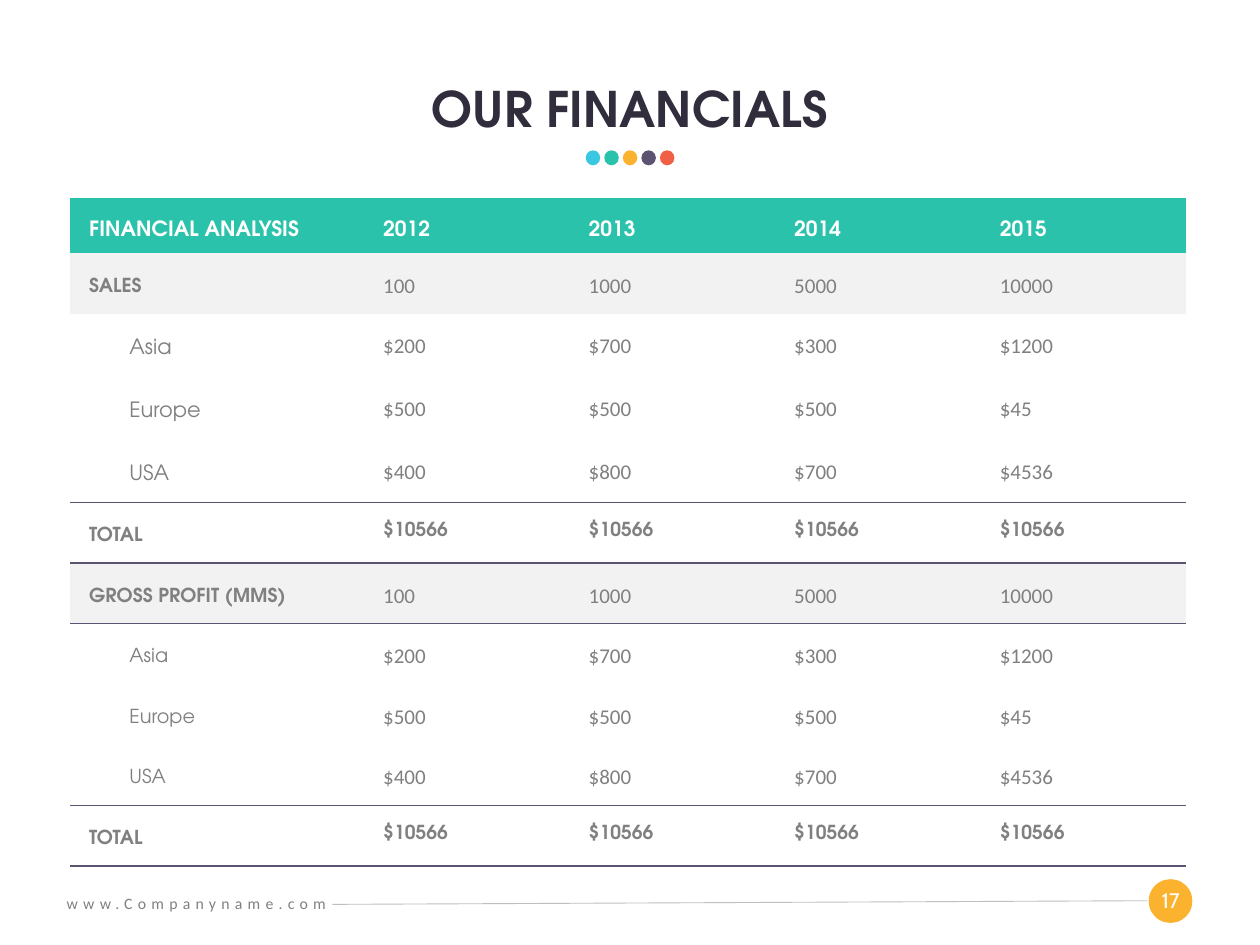
from lxml import etree
from pptx import Presentation
from pptx.dml.color import RGBColor
from pptx.enum import shapes, text
from pptx.oxml import ns
from pptx.util import Pt

HEADING_FONT, BODY_FONT, NUMBER_FONT = "TeX Gyre Adventor", "Calibri", "Cabin"
TEAL, YELLOW, PURPLE = "2BC2AC", "FBB22F", "5C5271"
DOT_COLORS = ["3AC7E2", TEAL, YELLOW, PURPLE, "F15F47"]
WHITE, GREY, PALE, DARK = "FFFFFF", "808080", "F2F2F2", "322D3D"

HEADER = ["FINANCIAL ANALYSIS", "2012", "2013", "2014", "2015"]
REGIONS = [
    ["Asia", "$200", "$700", "$300", "$1200"],
    ["Europe", "$500", "$500", "$500", "$45"],
    ["USA", "$400", "$800", "$700", "$4536"],
]
SUMMARY = ["100", "1000", "5000", "10000"]
TOTAL = ["TOTAL"] + ["$10566"] * 4
# Each section has a name and the size of its region labels
SECTIONS = [("SALES", 12), ("GROSS PROFIT (MMS)", 11)]


def color(value):
    return RGBColor.from_string(value)


def set_all(target, values):
    for name, value in values.items():
        setattr(target, name, value)


def write(paragraph, words, size, font, hex_color, bold=False):
    run = paragraph.add_run()
    run.text = words
    set_all(run.font, {"size": Pt(size), "name": font, "bold": bold})
    run.font.color.rgb = color(hex_color)
    return run


def add_filled(parent, kind, box, hex_color):
    shape = parent.add_shape(kind, *map(Pt, box))
    shape.shadow.inherit = False
    shape.fill.solid()
    shape.fill.fore_color.rgb = color(hex_color)
    shape.line.fill.background()
    return shape


def add_label(slide, box, words, size, font, hex_color, wrap=True, align=None):
    frame = slide.shapes.add_textbox(*map(Pt, box)).text_frame
    set_all(frame, {"word_wrap": wrap,
                    "auto_size": text.MSO_AUTO_SIZE.SHAPE_TO_FIT_TEXT})
    paragraph = frame.paragraphs[0]
    paragraph.alignment = align
    return write(paragraph, words, size, font, hex_color)


def add_title(slide, box, words):
    title = slide.shapes.title
    set_all(title, dict(zip(("left", "top", "width", "height"), map(Pt, box))))
    set_all(title.text_frame, {"vertical_anchor": text.MSO_ANCHOR.BOTTOM,
                               "auto_size": text.MSO_AUTO_SIZE.NONE,
                               "word_wrap": True})
    paragraph = title.text_frame.paragraphs[0]
    set_all(paragraph, {"alignment": text.PP_ALIGN.CENTER, "line_spacing": 0.9})
    write(paragraph, words, 28, HEADING_FONT, DARK, True)


def add_dots(slide, box):
    left, top, width, height = box
    diameter = 8.3
    pitch = (width - diameter) / (len(DOT_COLORS) - 1)
    group = slide.shapes.add_group_shape()
    for index, hex_color in enumerate(DOT_COLORS):
        add_filled(group.shapes, shapes.MSO_SHAPE.OVAL,
                   (left + index * pitch, top, diameter, height), hex_color)


def add_footer(slide, box):
    left, top, width, height = box
    right, badge = left + width, 25
    badge_left = right - badge
    circle = add_filled(slide.shapes, shapes.MSO_SHAPE.ROUNDED_RECTANGLE,
                        (badge_left, top, badge, height), YELLOW)
    circle.adjustments[0] = 0.5
    add_label(slide, (badge_left - 1, top + 1.4, badge + 2, 21.6), "17", 12,
              NUMBER_FONT, WHITE, False, text.PP_ALIGN.CENTER)

    # Rule between the address and the page number
    rule = slide.shapes.add_connector(
        shapes.MSO_CONNECTOR.STRAIGHT, Pt(left + 159), Pt(top + 14.4),
        Pt(badge_left - 1), Pt(top + 12.3))
    rule.line.color.rgb = color("BFBFBF")
    rule.line.width = Pt(0.5)
    etree.SubElement(rule.element.spPr, ns.qn("a:effectLst"))

    address = add_label(slide, (left, top + 5, 230, 18), "www.Companyname.com",
                        9, BODY_FONT, GREY)
    address.font.element.set("spc", "300") if hasattr(address.font, "element") \
        else address._r.get_or_add_rPr().set("spc", "300")


def add_border(cell, side):
    properties = cell._tc.get_or_add_tcPr()
    line = etree.Element(ns.qn("a:" + side), w=str(Pt(1)))
    fill = etree.SubElement(line, ns.qn("a:solidFill"))
    etree.SubElement(fill, ns.qn("a:srgbClr"), val=PURPLE)
    # Borders come before the fill, top before bottom
    position = len(properties.findall(ns.qn("a:lnT")))
    properties.insert(position, line)


def fill_cell(cell, words, fill, style, indent=10.8, bottom=8.6, label=False,
              borders=()):
    set_all(cell, {"margin_left": Pt(indent), "margin_right": Pt(10.8),
                   "margin_top": Pt(11.5), "margin_bottom": Pt(bottom)})
    cell.fill.solid()
    cell.fill.fore_color.rgb = color(fill)
    paragraph = cell.text_frame.paragraphs[0]
    if label:
        cell.vertical_anchor = text.MSO_ANCHOR.MIDDLE
        paragraph.line_spacing = 1.1
    write(paragraph, words, *style)
    for side in borders:
        add_border(cell, side)


def add_financials(slide, box):
    left, top, width, height = box
    row_count = 1 + len(SECTIONS) * (len(REGIONS) + 2)
    table = slide.shapes.add_table(row_count, len(HEADER),
                                   *map(Pt, box)).table
    set_all(table, {"first_row": False, "horz_banding": False})
    style_id = table._tbl.tblPr.find(ns.qn("a:tableStyleId"))
    style_id.text = "{2D5ABB26-0587-4C30-8999-92F81FD0307C}"

    # Wide label column, equal year columns
    label_width = 168
    for index, column in enumerate(table.columns):
        column.width = Pt(label_width if index == 0
                          else (width - label_width) / (len(HEADER) - 1))
    for index, row in enumerate(table.rows):
        row.height = Pt(31.5 if index == 0 else 33.2)

    def fill_row(row, values, fill, label_style, value_style, indent=10.8,
                 borders=()):
        for column, words in enumerate(values):
            first = column == 0
            fill_cell(table.cell(row, column), words, fill,
                      label_style if first else value_style,
                      indent=indent if first else 10.8, label=first,
                      borders=borders)

    # Header
    for column, words in enumerate(HEADER):
        cell = table.cell(0, column)
        fill_cell(cell, words, TEAL, (12, HEADING_FONT, WHITE, True), bottom=5.8)
        cell.vertical_anchor = text.MSO_ANCHOR.MIDDLE

    # Sections: summary, regions, total
    strong, plain = (11, HEADING_FONT, GREY, True), (12, BODY_FONT, GREY)
    row = 1
    for name, region_size in SECTIONS:
        fill_row(row, [name] + SUMMARY, PALE, strong, plain,
                 borders=("lnT",) if row > 1 else ())
        for offset, values in enumerate(REGIONS, 1):
            fill_row(row + offset, values, WHITE,
                     (region_size, HEADING_FONT, GREY), plain, indent=33.8,
                     borders=("lnB",) if offset == len(REGIONS) else ())
        row += len(REGIONS) + 1
        fill_row(row, TOTAL, WHITE, strong, strong, borders=("lnT", "lnB"))
        row += 1


def main():
    presentation = Presentation()
    set_all(presentation, {"slide_width": Pt(720), "slide_height": Pt(540)})
    slide = presentation.slides.add_slide(presentation.slide_layouts[5])
    add_footer(slide, (31, 502.4, 650.4, 25))
    add_dots(slide, (334.7, 85.9, 50.7, 8.6))
    add_title(slide, (0, 20, 720, 62.8), "OUR FINANCIALS")
    add_financials(slide, (40.2, 113.1, 637.8, 379.5))
    presentation.save("out.pptx")


if __name__ == "__main__":
    main()
